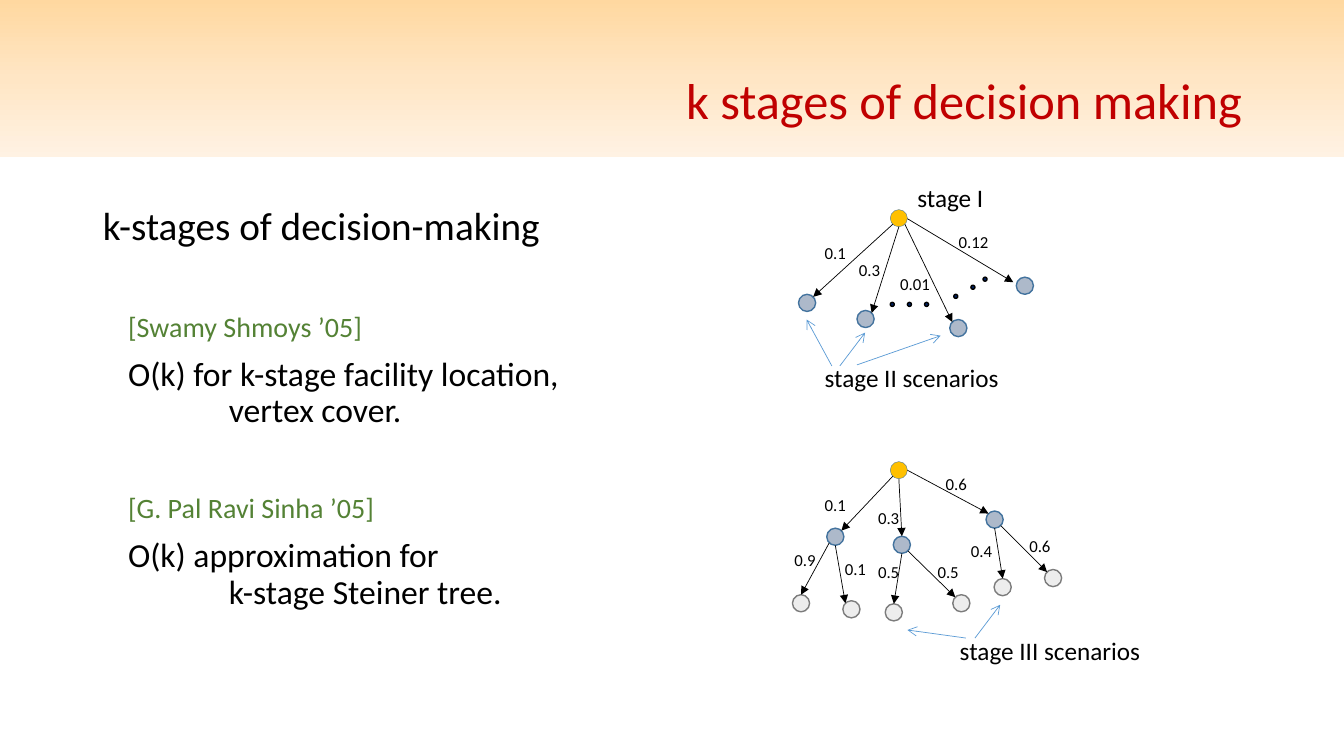
import copy
import math

import pptx
import pptx.util
import pptx.dml.color
import pptx.enum.shapes
import pptx.enum.text
import pptx.oxml.ns
import pptx.oxml.xmlchemy
from pptx.util import Inches

Color = pptx.dml.color.RGBColor
BLACK = Color(0x00, 0x00, 0x00)
RED = Color(0xC0, 0x00, 0x00)
GREEN = Color(0x54, 0x82, 0x35)
GOLD = Color(0xFF, 0xC0, 0x00)
STEEL = Color(0xAD, 0xB9, 0xCA)
NAVY = Color(0x00, 0x20, 0x60)
RIM_BLUE = Color(0x43, 0x73, 0x9E)
PALE = Color(0xED, 0xED, 0xED)
GREY = Color(0x7C, 0x7C, 0x7C)
SKY = Color(0x5B, 0x9B, 0xD5)
BANNER = [(0, Color(0xFF, 0xD8, 0xA0)), (0.5, Color(0xFF, 0xE6, 0xC5)), (1, Color(0xFF, 0xF2, 0xE3))]
FONT = "Calibri"

TITLE = "k stages of decision making"
BODY = [
    ("k-stages of decision-making", 28, BLACK, 10),
    ("\t[Swamy Shmoys ’05]", 20, GREEN, 46),
    ("\tO(k) for k-stage facility location, \v\tvertex cover.", 24, BLACK, 10),
    ("\t[G. Pal Ravi Sinha ’05]", 20, GREEN, 46),
    ("\tO(k) approximation for \v\tk-stage Steiner tree.", 24, BLACK, 10),
]
STYLES = {
    "root": (GOLD, RIM_BLUE, 0.25),
    "second": (STEEL, RIM_BLUE, 1),
    "third": (PALE, GREY, 1),
    "dot": (NAVY, BLACK, 1),
}
NODE_SIZE, DOT_SIZE = 0.17, 0.04
NODES = {
    "two-stage root": ("root", 8.83, 2.08),
    "A": ("second", 7.92, 2.92), "B": ("second", 8.5, 3.08),
    "C": ("second", 9.42, 3.17), "D": ("second", 10.08, 2.75),
    "three-stage root": ("root", 8.83, 4.58),
    "E": ("second", 8.2, 5.24), "F": ("second", 8.86, 5.32), "G": ("second", 9.78, 5.07),
    "E1": ("third", 7.86, 5.9), "E2": ("third", 8.36, 5.96),
    "F1": ("third", 8.78, 5.99), "F2": ("third", 9.45, 5.9),
    "G1": ("third", 9.86, 5.74), "G2": ("third", 10.36, 5.65),
}
DOTS = [(8.83, 3), (9, 3), (9.17, 3), (9.46, 2.92), (9.63, 2.83), (9.75, 2.75)]
SITE_ANGLES = {"E": 0, "SE": 45, "S": 90, "SW": 135, "NW": 225, "N": 270, "NE": 315}
EDGES = [
    ("two-stage root", "SW", "A", "NE"), ("two-stage root", "S", "B", "NE"),
    ("two-stage root", "SE", "C", "NW"), ("three-stage root", "SW", "E", "NE"),
    ("three-stage root", "S", "F", "N"), ("three-stage root", "E", "G", "NW"),
    ("E", "SW", "E1", "N"), ("E", "S", "E2", "NW"),
    ("F", "S", "F1", "N"), ("F", "SE", "F2", "NW"),
    ("G", "S", "G1", "N"), ("G", "SE", "G2", "NW"),
]
LOOSE_EDGE = ((9, 2.17), (10.05, 2.8))
POINTERS = [
    ((8.25, 3.63), (8, 3.17)), ((8.33, 3.63), (8.58, 3.3)), ((8.5, 3.62), (9.33, 3.33)),
    ((9.58, 6.33), (9, 6.25)), ((9.67, 6.33), (9.92, 6)),
]
PROBABILITIES = [
    ("0.1", 8.08, 2.36), ("0.3", 8.42, 2.53), ("0.01", 8.83, 2.67), ("0.12", 9.41, 2.25),
    ("0.1", 8.08, 4.86), ("0.3", 8.61, 4.99), ("0.6", 9.28, 4.65),
    ("0.9", 7.78, 5.4), ("0.1", 8.28, 5.49), ("0.5", 8.61, 5.52),
    ("0.5", 9.2, 5.52), ("0.4", 9.53, 5.32), ("0.6", 10.11, 5.27),
]
STAGES = [
    ("stage I", 9, 1.76, 0.86),
    ("stage II scenarios", 8.08, 3.55, 2.25),
    ("stage III scenarios", 9.42, 6.25, 2.25),
]


def place(shape, left, top, width, height):
    shape.left, shape.top = Inches(left), Inches(top)
    shape.width, shape.height = Inches(width), Inches(height)


def style(para, size, color):
    for span in para.runs:
        span.font.name = FONT
        span.font.size = pptx.util.Pt(size)
        span.font.color.rgb = color


def add_banner(page):
    banner = page.shapes.add_shape(pptx.enum.shapes.MSO_SHAPE.RECTANGLE, 0, 0, Inches(13.33), Inches(1.56))
    banner.shadow.inherit = False
    banner.line.fill.background()
    banner.fill.gradient()
    banner.fill.gradient_angle = 270
    stop_list = banner.element.find(".//" + pptx.oxml.ns.qn("a:gsLst"))
    stop_list.insert(1, copy.deepcopy(stop_list[0]))
    for stop, (position, color) in zip(banner.fill.gradient_stops, BANNER):
        stop.position = position
        stop.color.rgb = color
    page.shapes.element.insert(2, banner.element)


def add_circle(page, kind, left, top, size):
    fill, rim, width = STYLES[kind]
    circle = page.shapes.add_shape(
        pptx.enum.shapes.MSO_SHAPE.OVAL, Inches(left), Inches(top), Inches(size), Inches(size))
    circle.shadow.inherit = False
    circle.fill.solid()
    circle.fill.fore_color.rgb = fill
    circle.line.color.rgb = rim
    circle.line.width = pptx.util.Pt(width)


def add_arrow(page, start, end, color, head):
    arrow = page.shapes.add_connector(
        pptx.enum.shapes.MSO_CONNECTOR.STRAIGHT, *(Inches(value) for value in start + end))
    arrow.line.color.rgb = color
    arrow.line.width = pptx.util.Pt(0.5)
    tail = pptx.oxml.xmlchemy.OxmlElement("a:tailEnd")
    tail.set("type", head)
    arrow.element.spPr.find(pptx.oxml.ns.qn("a:ln")).append(tail)
    arrow.element.spPr.append(pptx.oxml.xmlchemy.OxmlElement("a:effectLst"))


def site_point(node, site):
    left, top = NODES[node][1:]
    radius, angle = NODE_SIZE / 2, math.radians(SITE_ANGLES[site])
    return (left + radius * (1 + math.cos(angle)), top + radius * (1 + math.sin(angle)))


def add_label(page, text, left, top, width, height, size, wrap):
    box = page.shapes.add_textbox(Inches(left), Inches(top), Inches(width), Inches(height))
    box.text_frame.text = text
    box.text_frame.word_wrap = wrap
    box.text_frame.auto_size = pptx.enum.text.MSO_AUTO_SIZE.SHAPE_TO_FIT_TEXT
    style(box.text_frame.paragraphs[0], size, BLACK)


def fill_placeholders(page):
    title, body = page.shapes.title, page.placeholders[1]
    place(title, 0.92, 0.3, 11.5, 1.45)
    place(body, 0.92, 2, 11.5, 4.76)
    title.text_frame.text = TITLE
    title.text_frame.vertical_anchor = pptx.enum.text.MSO_ANCHOR.MIDDLE
    heading = title.text_frame.paragraphs[0]
    heading.alignment = pptx.enum.text.PP_ALIGN.RIGHT
    heading.line_spacing = 0.9
    style(heading, 36, RED)
    for frame in (title.text_frame, body.text_frame):
        frame.auto_size = pptx.enum.text.MSO_AUTO_SIZE.NONE
    for index, (text, size, color, gap) in enumerate(BODY):
        para = body.text_frame.add_paragraph() if index else body.text_frame.paragraphs[0]
        para.text = text
        para.line_spacing = 0.9
        para.space_before = pptx.util.Pt(gap)
        style(para, size, color)
        properties = para._p.get_or_add_pPr()
        properties.set("marL", str(Inches(0.25)))
        properties.set("indent", str(-Inches(0.25)))
        properties.set("defTabSz", str(Inches(1)))
        properties.append(pptx.oxml.xmlchemy.OxmlElement("a:buNone"))


def main():
    """Build the slide on k stages of decision making."""
    deck = pptx.Presentation()
    deck.slide_width, deck.slide_height = Inches(13.33), Inches(7.5)
    page = deck.slides.add_slide(deck.slide_layouts[1])
    add_banner(page)
    fill_placeholders(page)
    for kind, left, top in NODES.values():
        add_circle(page, kind, left, top, NODE_SIZE)
    for left, top in DOTS:
        add_circle(page, "dot", left, top, DOT_SIZE)
    for parent, start, child, end in EDGES:
        add_arrow(page, site_point(parent, start), site_point(child, end), BLACK, "triangle")
    add_arrow(page, *LOOSE_EDGE, BLACK, "triangle")
    for start, end in POINTERS:
        add_arrow(page, start, end, SKY, "arrow")
    for text, left, top in PROBABILITIES:
        add_label(page, text, left, top, 0.5 if len(text) > 3 else 0.42, 0.3, 12, False)
    for text, left, top, width in STAGES:
        add_label(page, text, left, top, width, 0.4, 18, width > 1)
    deck.save("out.pptx")


if __name__ == "__main__":
    main()
